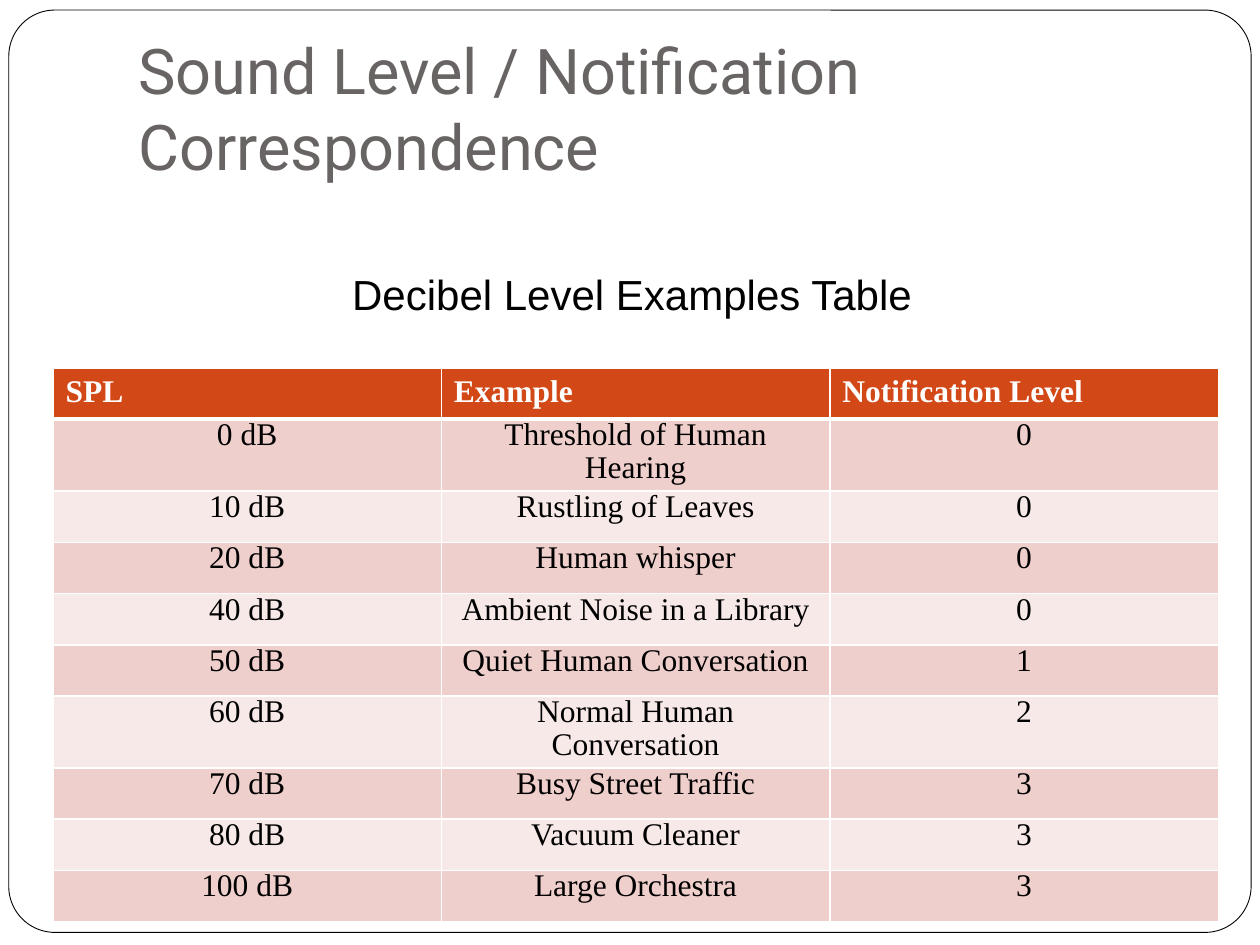
import pptx
import pptx.util
import pptx.dml.color
import pptx.enum.shapes
import pptx.enum.text
import pptx.oxml
import pptx.oxml.ns

Inches, Pt = pptx.util.Inches, pptx.util.Pt
RGB = pptx.dml.color.RGBColor
ALIGN = pptx.enum.text.PP_ALIGN
ANCHOR = pptx.enum.text.MSO_ANCHOR

# Content
TITLE = "Sound Level / Notification Correspondence"
LABEL = "Decibel Level Examples Table"
HEAD = ("SPL", "Example", "Notification Level")
LEVELS = [
    ("0 dB", "Threshold of Human Hearing", "0"),
    ("10 dB", "Rustling of Leaves", "0"),
    ("20 dB", "Human whisper", "0"),
    ("40 dB", "Ambient Noise in a Library", "0"),
    ("50 dB", "Quiet Human Conversation", "1"),
    ("60 dB", "Normal Human Conversation", "2"),
    ("70 dB", "Busy Street Traffic", "3"),
    ("80 dB", "Vacuum Cleaner", "3"),
    ("100 dB", "Large Orchestra", "3"),
]

# Colours and formats
WHITE, BLACK = RGB(255, 255, 255), RGB(0, 0, 0)
GREY, RUST = RGB(0x69, 0x64, 0x64), RGB(0xD3, 0x48, 0x17)
BANDS = (RGB(0xEF, 0xCF, 0xCC), RGB(0xF7, 0xE9, 0xE8))
TITLE_FONT = {"name": "Roboto", "size": Pt(36)}
LABEL_FONT = {"name": "Arial", "size": Pt(24)}
HEAD_FONT = {"name": "Times New Roman", "size": Pt(18), "bold": True}
BODY_FONT = {**HEAD_FONT, "bold": False}
BODY_PARA = {"alignment": ALIGN.CENTER, "line_spacing": 0.95,
             "space_after": Pt(3.5)}
BODY_CELL = {"margin_left": Inches(0.07), "margin_right": Inches(0.07),
             "margin_top": 0, "margin_bottom": 0}


def apply(item, form):
    for key, value in form.items():
        setattr(item, key, value)


def write(frame, text, font, color, para):
    line = frame.paragraphs[0]
    apply(line, para)
    run = line.add_run()
    run.text = text
    apply(run.font, font)
    run.font.color.rgb = color


def add_text(box, text, font, color, para, form):
    frame = slide.shapes.add_textbox(*map(Inches, box)).text_frame
    apply(frame, form)
    write(frame, text, font, color, para)


def add_edges(cell, base):
    props = cell._tc.get_or_add_tcPr()
    for spot, (side, width) in enumerate(zip("LRTB", (1, 1, 1, base))):
        props.insert(spot, pptx.oxml.parse_xml(
            f'<a:ln{side} {pptx.oxml.ns.nsdecls("a")} w="{Pt(width)}">'
            f'<a:solidFill><a:srgbClr val="{WHITE}"/></a:solidFill>'
            f'</a:ln{side}>'))


show = pptx.Presentation()
show.slide_width, show.slide_height = Inches(10), Inches(7.5)
slide = show.slides.add_slide(show.slide_layouts[6])

# Rounded page frame
edge = slide.shapes.add_shape(
    pptx.enum.shapes.MSO_SHAPE.ROUNDED_RECTANGLE,
    *map(Inches, (0.07, 0.08, 9.86, 7.32)))
edge.adjustments[0] = 0.05
edge.shadow.inherit = False
edge.fill.solid()
edge.fill.fore_color.rgb = WHITE
edge.line.color.rgb = BLACK
edge.line.width = Pt(0.5)

# Title and table label
add_text((1, 0.3, 8.5, 1.25), TITLE, TITLE_FONT, GREY, {},
         {"word_wrap": True, "vertical_anchor": ANCHOR.BOTTOM,
          "margin_bottom": Inches(0.1)})
add_text((2.67, 2.08, 4.69, 0.5), LABEL, LABEL_FONT, BLACK,
         {"alignment": ALIGN.CENTER},
         {"word_wrap": False, "vertical_anchor": ANCHOR.MIDDLE,
          "auto_size": pptx.enum.text.MSO_AUTO_SIZE.SHAPE_TO_FIT_TEXT})

# Sound level table
rows = [HEAD, *LEVELS]
table = slide.shapes.add_table(
    len(rows), len(HEAD), *map(Inches, (0.42, 2.92, 9.25, 4.07))).table
for r, row in enumerate(rows):
    for c, text in enumerate(row):
        cell = table.cell(r, c)
        cell.fill.solid()
        if r == 0:
            cell.fill.fore_color.rgb = RUST
            write(cell.text_frame, text, HEAD_FONT, WHITE, {})
        else:
            cell.fill.fore_color.rgb = BANDS[(r - 1) % 2]
            apply(cell, BODY_CELL)
            write(cell.text_frame, text, BODY_FONT, BLACK, BODY_PARA)
        add_edges(cell, 3 if r == 0 else 1)

show.save("out.pptx")
